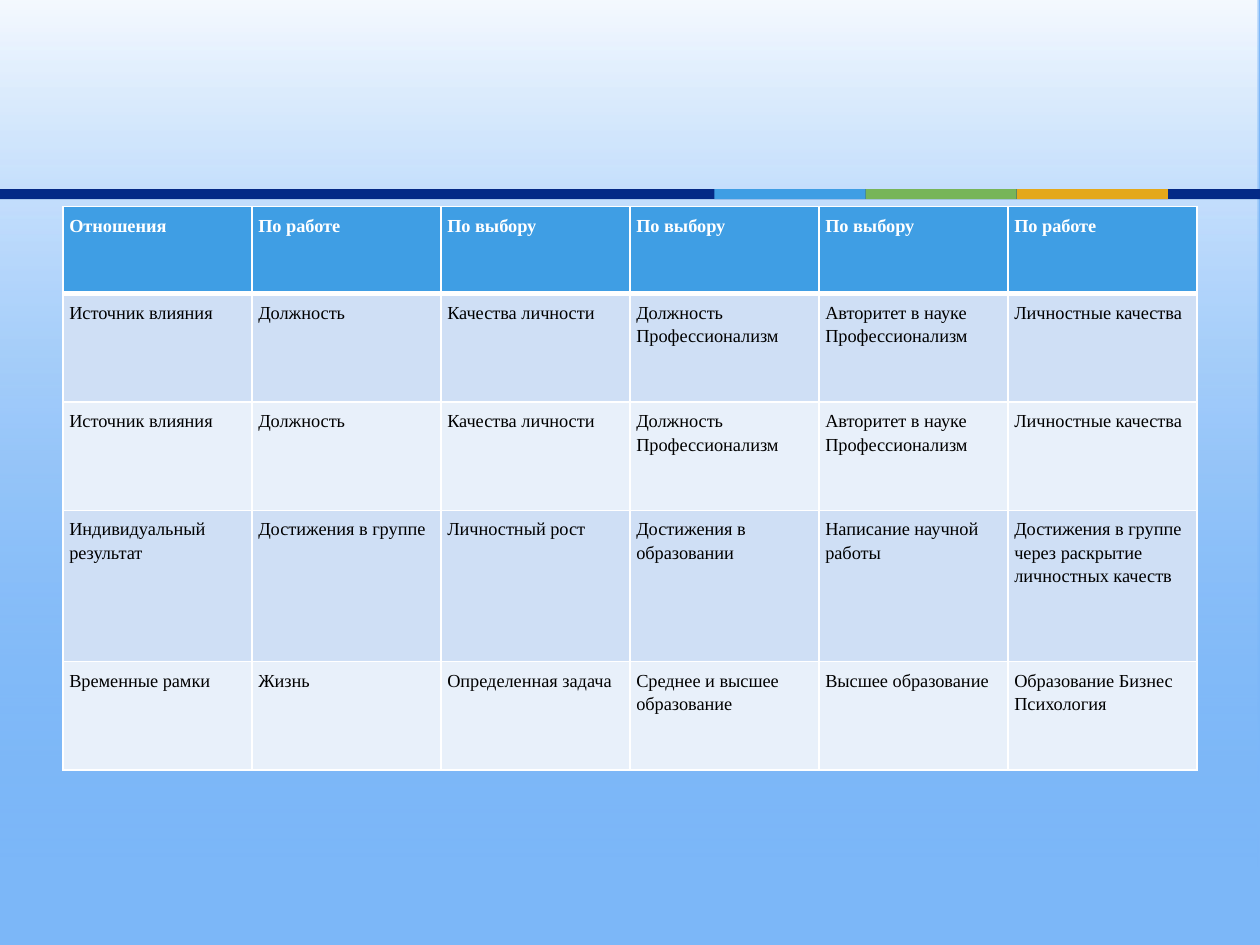
from lxml import etree
from pptx import Presentation
from pptx.dml.color import RGBColor
from pptx.enum.shapes import MSO_SHAPE
from pptx.oxml.ns import qn
from pptx.util import Inches, Pt

RECT = MSO_SHAPE.RECTANGLE

BACKGROUND = "7CB7F8"
BORDER = "FFFFFF"
GLOW_STOPS = [(0.01, "7CB7F8", 0), (1, "FFFFFF", 92)]
STRIPES = [
    (0, 10, "042986"),
    (5.67, 1.2, "3F9EE4"),
    (6.87, 1.2, "77B559"),
    (8.07, 1.2, "E4A81B"),
]
STRIPE_TOP, STRIPE_HEIGHT = 1.5, 0.08

INFLUENCE = ["Источник влияния", "Должность", "Качества личности",
             "Должность Профессионализм", "Авторитет в науке Профессионализм",
             "Личностные качества"]
ROWS = [
    ["Отношения", "По работе", "По выбору", "По выбору", "По выбору", "По работе"],
    INFLUENCE,
    INFLUENCE,
    ["Индивидуальный результат", "Достижения в группе", "Личностный рост",
     "Достижения в образовании", "Написание научной работы",
     "Достижения в группе через раскрытие личностных качеств"],
    ["Временные рамки", "Жизнь", "Определенная задача",
     "Среднее и высшее образование", "Высшее образование",
     "Образование Бизнес Психология"],
]
ROW_HEIGHTS = [0.69, 0.86, 0.86, 1.2, 0.86]
COLUMN_WIDTH = 1.5
HEADER_FILL = "3F9EE4"
BAND_FILLS = ["E8F0FA", "CFDFF5"]
FONT = {"name": "Times New Roman", "size": Pt(10.5)}
MARGINS = ["margin_left", "margin_right", "margin_top", "margin_bottom"]


def rgb(color):
    return RGBColor.from_string(color)


def add_rect(s, left, top, width, height):
    sp = s.shapes.add_shape(RECT, *map(Inches, (left, top, width, height)))
    sp.shadow.inherit = False
    sp.line.fill.background()
    return sp


def add_glow(s):
    sp = add_rect(s, -0.01, 0, 10, 6.88)
    sp.fill.gradient()
    sp.fill.gradient_angle = 90
    for stop, (position, color, opacity) in zip(sp.fill.gradient_stops, GLOW_STOPS):
        stop.position = position
        stop.color.rgb = rgb(color)
    for clr, (_, _, opacity) in zip(sp.fill._xPr.iter(qn("a:srgbClr")), GLOW_STOPS):
        etree.SubElement(clr, qn("a:alpha"), val=str(opacity * 1000))


def set_borders(cell, widths):
    tcPr = cell._tc.get_or_add_tcPr()
    for side, width in widths.items():
        ln = etree.SubElement(tcPr, qn(f"a:ln{side}"), w=str(Pt(width)))
        fill = etree.SubElement(ln, qn("a:solidFill"))
        etree.SubElement(fill, qn("a:srgbClr"), val=BORDER)


def format_cell(cell, text, row):
    header = row == 0
    set_borders(cell, {"L": 1, "R": 1, "T": 3 if row == 1 else 1, "B": 3 if header else 1})
    cell.fill.solid()
    cell.fill.fore_color.rgb = rgb(HEADER_FILL if header else BAND_FILLS[row % 2])
    for margin in MARGINS:
        setattr(cell, margin, Inches(0.05))
    p = cell.text_frame.paragraphs[0]
    p.line_spacing = 1.15
    r = p.add_run()
    r.text = text
    for name, value in {**FONT, "bold": header}.items():
        setattr(r.font, name, value)
    r.font.color.rgb = rgb("FFFFFF" if header else "000000")


def add_relations_table(s):
    count = len(ROWS[0])
    frame = s.shapes.add_table(len(ROWS), count, Inches(0.5), Inches(1.64),
                               Inches(COLUMN_WIDTH * count), Inches(sum(ROW_HEIGHTS)))
    table = frame.table
    for column in table.columns:
        column.width = Inches(COLUMN_WIDTH)
    for i, (texts, height) in enumerate(zip(ROWS, ROW_HEIGHTS)):
        table.rows[i].height = Inches(height)
        for j, text in enumerate(texts):
            format_cell(table.cell(i, j), text, i)


def main():
    prs = Presentation()
    prs.slide_width, prs.slide_height = Inches(10), Inches(7.5)
    s = prs.slides.add_slide(prs.slide_layouts[6])
    s.background.fill.solid()
    s.background.fill.fore_color.rgb = rgb(BACKGROUND)
    add_glow(s)
    for left, width, color in STRIPES:
        sp = add_rect(s, left, STRIPE_TOP, width, STRIPE_HEIGHT)
        sp.fill.solid()
        sp.fill.fore_color.rgb = rgb(color)
    add_relations_table(s)
    prs.save("out.pptx")


if __name__ == "__main__":
    main()
